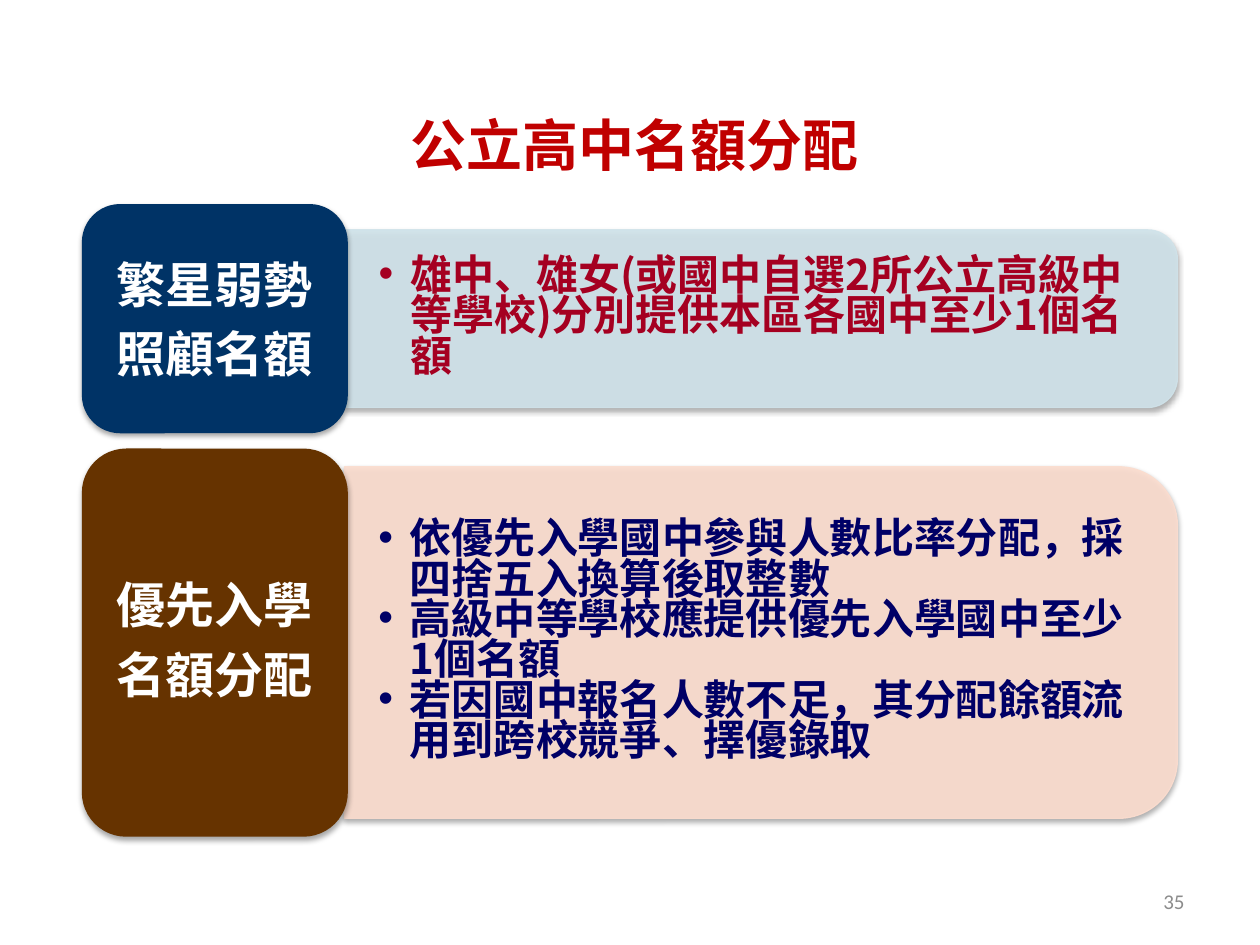
from lxml.etree import SubElement
from pptx import Presentation
from pptx.dml.color import RGBColor
from pptx.enum.shapes import MSO_SHAPE as Kind
from pptx.enum.text import MSO_ANCHOR as Anchor, MSO_AUTO_SIZE as Fit, PP_ALIGN as Align
from pptx.oxml.ns import qn
from pptx.util import Pt

HUES = {
    "title": "C00000", "white": "FFFFFF", "page": "8C8C8C", "shade": "000000",
    "navy": "003366", "sky": "D0E3EA", "wine": "A50021",
    "brown": "663300", "peach": "FCDDCF", "ink": "000066",
}
CJK = "Noto Sans CJK SC"
TITLE = "公立高中名額分配"
PAGE = "35"
ROWS = [
    {
        "head": ["繁星弱勢", "照顧名額"],
        "body": ["雄中、雄女(或國中自選2所公立高級中等學校)分別提供本區各國中至少1個名額"],
        "tab": "navy", "panel": "sky", "text": "wine",
        "high": 131, "deep": 101.5, "lead": 1, "after": 6,
    },
    {
        "head": ["優先入學", "名額分配"],
        "body": [
            "依優先入學國中參與人數比率分配，採四捨五入換算後取整數",
            "高級中等學校應提供優先入學國中至少1個名額",
            "若因國中報名人數不足，其分配餘額流用到跨校競爭、擇優錄取",
        ],
        "tab": "brown", "panel": "peach", "text": "ink",
        "high": 221.8, "deep": 200.9, "lead": 0.9, "after": 9.8,
    },
]
LEFT, TOP, GAP = 46.8, 116.6, 8.7
TAB, WIDE = 152, 476
CORNER = 0.0488


def color(name):
    return RGBColor.from_string(HUES[name])


def write(shape, lines, size, hue, font=CJK, bold=True, align=Align.LEFT,
          pad=(7.2, 3.6), lead=None, after=None, bullet=False):
    frame = shape.text_frame
    frame.word_wrap = True
    frame.auto_size = Fit.NONE
    frame.vertical_anchor = Anchor.MIDDLE
    frame.margin_left = frame.margin_right = Pt(pad[0])
    frame.margin_top = frame.margin_bottom = Pt(pad[1])
    for i, line in enumerate(lines):
        para = frame.add_paragraph() if i else frame.paragraphs[0]
        para.alignment = align
        if lead:
            para.line_spacing = lead
        if after is not None:
            para.space_after = Pt(after)
        if bullet:
            para.level = 1
            props = para._p.get_or_add_pPr()
            props.set("marL", str(Pt(18)))
            props.set("indent", str(Pt(-18)))
            SubElement(props, qn("a:buFont"), typeface="Arial")
            SubElement(props, qn("a:buChar"), char="•")
        run = para.add_run()
        run.text = line
        run.font.size = Pt(size)
        run.font.bold = bold
        run.font.name = font
        run.font.color.rgb = color(hue)
        SubElement(run._r.get_or_add_rPr(), qn("a:ea"), typeface=font)


def fade(node, share):
    SubElement(node, qn("a:alpha"), val=str(share * 1000))


def block(kind, x, y, w, h, hue):
    shape = slide.shapes.add_shape(kind, Pt(x), Pt(y), Pt(w), Pt(h))
    shape.fill.solid()
    shape.fill.fore_color.rgb = color(hue)
    shape.line.fill.background()
    shape.shadow.inherit = False
    glow = SubElement(
        shape._element.spPr.find(qn("a:effectLst")), qn("a:outerShdw"),
        blurRad=str(Pt(3.1)), dist=str(Pt(1.8)), dir="5400000", rotWithShape="0")
    fade(SubElement(glow, qn("a:srgbClr"), val=HUES["shade"]), 35)
    return shape


def panel(x, mid, w, h, hue):
    shape = block(Kind.ROUND_2_SAME_RECTANGLE, x + (w - h) / 2, mid - w / 2, h, w, hue)
    shape.rotation = 90
    shape.line.color.rgb = color(hue)
    shape.line.width = Pt(0.75)
    props = shape._element.spPr
    for part in (props, props.find(qn("a:ln"))):
        fade(part.find(qn("a:solidFill")).find(qn("a:srgbClr")), 90)


def box(x, y, w, h):
    return slide.shapes.add_textbox(Pt(x), Pt(y), Pt(w), Pt(h))


deck = Presentation()
deck.slide_width, deck.slide_height = Pt(720), Pt(540)
slide = deck.slides.add_slide(deck.slide_layouts[5])

title = slide.shapes.title
title.left, title.top, title.width, title.height = Pt(25.2), Pt(49), Pt(675.4), Pt(67)
write(title, [TITLE], 32, "title", align=Align.CENTER)

y = TOP
for row in ROWS:
    x, mid, deep = LEFT + TAB - 2, y + row["high"] / 2, row["deep"]
    panel(x, mid, WIDE, deep, row["panel"])
    inset = CORNER * deep
    body = box(x, mid - deep / 2 + inset, WIDE - inset, deep - 2 * inset)
    write(body, row["body"], 24, row["text"], pad=(19.5, 9.75), lead=0.8, bullet=True)
    tab = block(Kind.ROUNDED_RECTANGLE, LEFT, y, TAB, row["high"], row["tab"])
    write(tab, row["head"], 28, "white", align=Align.CENTER, pad=(8.4, 4.2),
          lead=row["lead"], after=row["after"])
    y += row["high"] + GAP

write(box(516, 500.5, 168, 28.8), [PAGE], 12, "page", font="Calibri", bold=False,
      align=Align.RIGHT)

deck.save("out.pptx")
